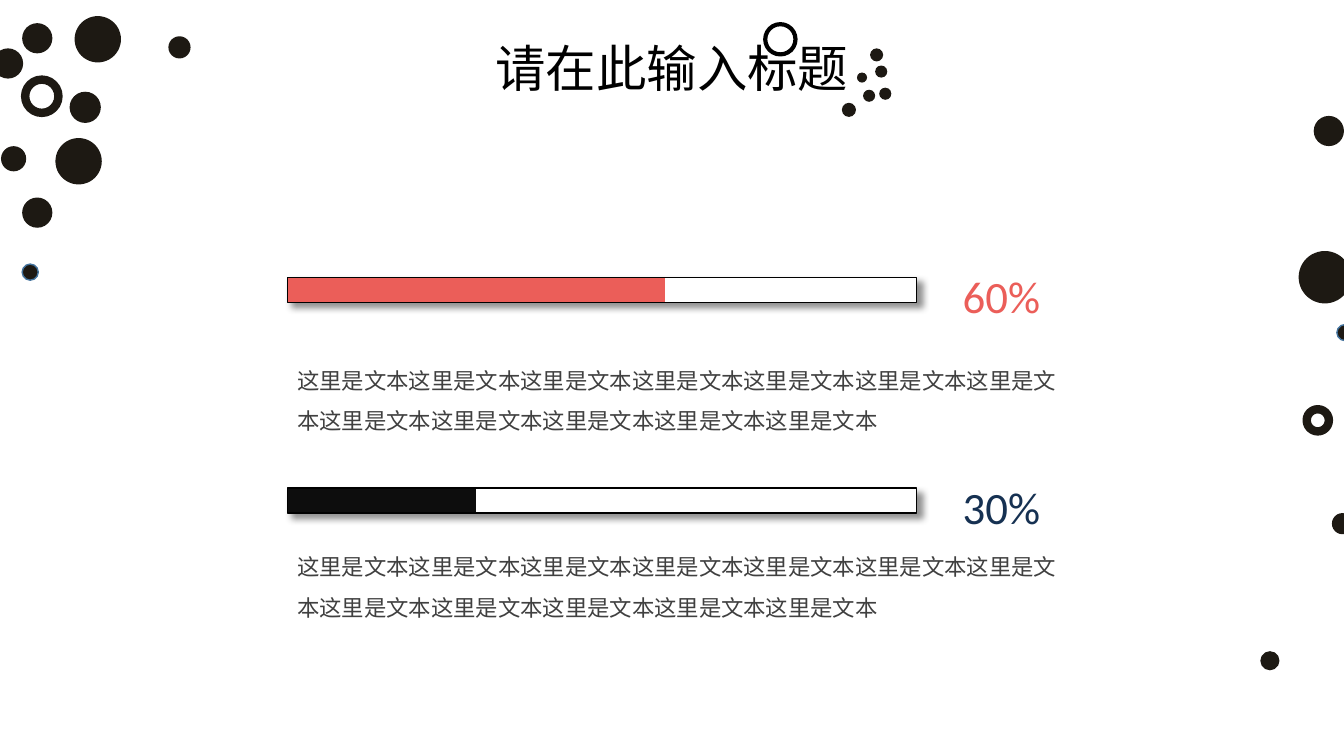
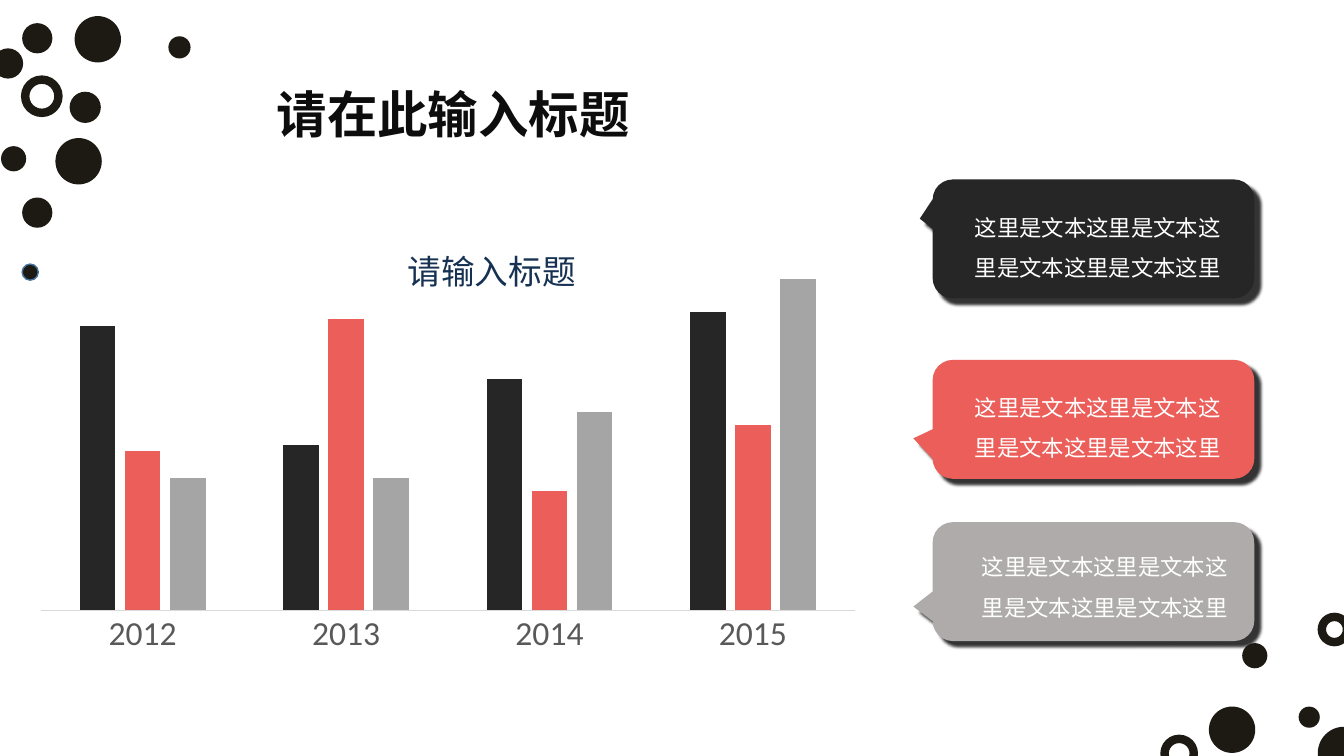
from dataclasses import dataclass
from typing import NamedTuple

from lxml import etree
from pptx import Presentation
from pptx.chart import data as cd
from pptx.dml.color import RGBColor
from pptx.enum import chart as ch, shapes as sh, text as tx
from pptx.oxml import ns
from pptx.util import Inches, Pt


@dataclass(frozen=True)
class Theme:
    dot: str = "1D1913"
    dot_edge: str = "43739E"
    black: str = "000000"
    white: str = "FFFFFF"
    ink: str = "0D0D0D"
    charcoal: str = "262626"
    coral: str = "EB5E59"
    navy: str = "163152"
    gray: str = "A5A5A5"
    warm_gray: str = "AFABAB"
    body: str = "404040"
    axis_text: str = "595959"
    axis_line: str = "D9D9D9"
    latin: str = "Calibri"
    cjk: str = "Noto Sans CJK SC"
    title_size: int = 36
    number_size: int = 32
    chart_size: int = 24
    body_size: int = 16


T = Theme()


class Box(NamedTuple):
    x: float
    y: float
    w: float
    h: float


class Dot(NamedTuple):
    x: float
    y: float
    d: float
    fill: str | None = T.dot
    line: str | None = None
    weight: float = 1


class Shadow(NamedTuple):
    alpha: int
    blur: float
    dist: float


class Progress(NamedTuple):
    y: float
    percent: int
    bar_color: str
    number_color: str
    text_y: float


class Callout(NamedTuple):
    y: float
    color: str
    tip_x: float
    tip_y: float
    text_x: float
    text_y: float


def ring(x: float, y: float, d: float) -> Dot:
    return Dot(x, y, d, None, T.dot, 6)


def edged(x: float, y: float) -> Dot:
    return Dot(x, y, 0.16, T.dot, T.dot_edge)


LEFT_DOTS = [
    Dot(1.67, 0.36, 0.22), Dot(0.01, 1.45, 0.25), Dot(0.69, 0.91, 0.31),
    Dot(-0.07, 0.48, 0.3), edged(0.22, 2.62), ring(0.25, 0.79, 0.33),
    Dot(0.74, 0.16, 0.46), Dot(0.22, 1.96, 0.3), Dot(0.22, 0.23, 0.3),
    Dot(0.55, 1.37, 0.46),
]
RIGHT_DOTS = [
    edged(13.26, 3.22), Dot(13.21, 5.09, 0.21), Dot(12.88, 2.49, 0.52),
    Dot(12.5, 6.46, 0.19), ring(12.96, 4.06, 0.22), Dot(13.03, 1.15, 0.3),
]
TITLE_DOTS = [
    Dot(8.35, 1.02, 0.14), Dot(8.5, 0.72, 0.1), Dot(8.63, 0.48, 0.13),
    Dot(8.68, 0.65, 0.12), Dot(8.56, 0.89, 0.12), Dot(8.72, 0.87, 0.12),
    Dot(7.59, 0.24, 0.3, T.white, T.black, 3),
]
CORNER_DOTS = [
    Dot(13.07, 7.21, 0.52), Dot(11.99, 7.01, 0.46), Dot(12.88, 7.01, 0.21),
    Dot(12.32, 6.38, 0.25), ring(11.55, 7.33, 0.29), ring(13.11, 6.12, 0.25),
]
PROGRESS = [
    Progress(2.75, 60, T.coral, T.coral, 3.46),
    Progress(4.84, 30, T.ink, T.navy, 5.31),
]
CALLOUTS = [
    Callout(1.78, T.charcoal, -0.54, -0.17, 9.57, 1.94),
    Callout(3.57, T.coral, -0.56, 0.16, 9.57, 3.73),
    Callout(5.18, T.warm_gray, -0.56, 0.21, 9.64, 5.31),
]
CATEGORIES = ["2012", "2013", "2014", "2015"]
SERIES = [
    ("Series 1", (86, 50, 70, 90), T.charcoal),
    ("Series 2", (48, 88, 36, 56), T.coral),
    ("Series 3", (40, 40, 60, 100), T.gray),
]
TITLE = "请在此输入标题"
PHRASE = "这里是文本"
BAR_SHADOW = Shadow(44, 5, 5)
CALLOUT_SHADOW = Shadow(80, 2, 6)


def rgb(color: str) -> RGBColor:
    return RGBColor.from_string(color)


def set_all(target, values: dict) -> None:
    for name, value in values.items():
        setattr(target, name, value)


def set_font(font, size: float, color: str, name: str, bold: bool = False) -> None:
    set_all(font, {"size": Pt(size), "name": name, "bold": bold})
    font.color.rgb = rgb(color)


def add_run(p, text: str, size: float, color: str, name: str, bold: bool = False) -> None:
    r = p.add_run()
    r.text = text
    set_font(r.font, size, color, name, bold)
    etree.SubElement(r._r.get_or_add_rPr(), ns.qn("a:ea"), typeface=name)


def add_text(s, box: Box, text: str, size: float, color: str, name: str = T.cjk,
             bold: bool = False, **paragraph) -> None:
    tf = s.shapes.add_textbox(*map(Inches, box)).text_frame
    set_all(tf, {"word_wrap": True, "auto_size": tx.MSO_AUTO_SIZE.SHAPE_TO_FIT_TEXT})
    p = tf.paragraphs[0]
    set_all(p, paragraph)
    add_run(p, text, size, color, name, bold)


def add_title(s, x: float, y: float, color: str, bold: bool = False) -> None:
    add_text(s, Box(x, y, 5.27, 0.71), TITLE, T.title_size, color, bold=bold,
             alignment=tx.PP_ALIGN.CENTER)


def add_body(s, box: Box, text: str, color: str) -> None:
    add_text(s, box, text, T.body_size, color, line_spacing=1.5)


def add_shape(shapes, kind, box: Box, fill: str | None, line: str | None = None,
              weight: float = 1):
    sp = shapes.add_shape(kind, *map(Inches, box))
    sp.shadow.inherit = False
    if fill:
        sp.fill.solid()
        sp.fill.fore_color.rgb = rgb(fill)
    else:
        sp.fill.background()
    if line:
        sp.line.color.rgb = rgb(line)
        sp.line.width = Pt(weight)
    else:
        sp.line.fill.background()
    return sp


def add_shadow(sp, shadow: Shadow) -> None:
    effects = sp._element.spPr.find(ns.qn("a:effectLst"))
    outer = etree.SubElement(
        effects, ns.qn("a:outerShdw"), blurRad=str(Pt(shadow.blur)),
        dist=str(Pt(shadow.dist)), dir="2700000", algn="tl", rotWithShape="0")
    color = etree.SubElement(outer, ns.qn("a:srgbClr"), val=T.black)
    etree.SubElement(color, ns.qn("a:alpha"), val=str(shadow.alpha * 1000))


def add_dots(s, dots: list[Dot]) -> None:
    group = s.shapes.add_group_shape()
    for dot in dots:
        add_shape(group.shapes, sh.MSO_SHAPE.OVAL, Box(dot.x, dot.y, dot.d, dot.d),
                  dot.fill, dot.line, dot.weight)


def add_progress(s, item: Progress) -> None:
    sp = add_shape(s.shapes, sh.MSO_SHAPE.RECTANGLE, Box(2.85, item.y, 6.24, 0.25),
                   T.white, T.black)
    sp.fill.gradient()
    sp.fill.gradient_angle = 0
    for stop, color in zip(sp.fill.gradient_stops, (item.bar_color, T.white)):
        stop.position = item.percent / 100
        stop.color.rgb = rgb(color)
    add_shadow(sp, BAR_SHADOW)
    add_text(s, Box(9.45, item.y - 0.13, 1.16, 0.64), f"{item.percent}%",
             T.number_size, item.number_color, T.latin)
    add_body(s, Box(2.85, item.text_y, 7.76, 1.18), PHRASE * 12, T.body)


def add_callout(s, item: Callout) -> None:
    sp = add_shape(s.shapes, sh.MSO_SHAPE.ROUNDED_RECTANGULAR_CALLOUT,
                   Box(9.25, item.y, 3.19, 1.18), item.color)
    for i, value in enumerate((item.tip_x, item.tip_y, 0.17)):
        sp.adjustments[i] = value
    add_shadow(sp, CALLOUT_SHADOW)
    add_body(s, Box(item.text_x, item.text_y, 2.81, 0.86), PHRASE * 4 + "这里", T.white)


def set_layout(element, **values) -> None:
    layout = element.find(ns.qn("c:layout"))
    if layout is None:
        layout = etree.Element(ns.qn("c:layout"))
        after = element.find(ns.qn("c:tx"))
        element.insert(0 if after is None else element.index(after) + 1, layout)
    manual = etree.SubElement(layout, ns.qn("c:manualLayout"))
    for name, value in values.items():
        etree.SubElement(manual, ns.qn(f"c:{name}"), val=str(value))


def add_column_chart(s) -> None:
    data = cd.CategoryChartData()
    data.categories = CATEGORIES
    for name, values, _ in SERIES:
        data.add_series(name, values)
    chart = s.shapes.add_chart(ch.XL_CHART_TYPE.COLUMN_CLUSTERED,
                               *map(Inches, Box(0.24, 1.56, 8.32, 5.55)), data).chart
    set_font(chart.font, 10, T.black, T.latin)
    chart.has_legend = False
    chart.has_title = True
    add_run(chart.chart_title.text_frame.paragraphs[0], "请输入标题",
            T.chart_size, T.navy, T.cjk)
    set_layout(chart.chart_title._element, xMode="edge", yMode="edge", x=0.45, y=0.14)
    set_layout(chart._chartSpace.chart.plotArea, layoutTarget="inner", xMode="edge",
               yMode="edge", x=0.02, y=0.1, w=0.97, h=0.71)
    plot = chart.plots[0]
    set_all(plot, {"gap_width": 219, "overlap": -27, "vary_by_categories": False})
    for series, (_, _, color) in zip(plot.series, SERIES):
        series.format.fill.solid()
        series.format.fill.fore_color.rgb = rgb(color)
    set_all(chart.value_axis, {"visible": False, "has_major_gridlines": False,
                               "minimum_scale": 0, "maximum_scale": 120})
    axis = chart.category_axis
    set_all(axis, {"major_tick_mark": ch.XL_TICK_MARK.NONE, "has_major_gridlines": False})
    set_font(axis.tick_labels.font, T.chart_size, T.axis_text, T.latin)
    axis.format.line.color.rgb = rgb(T.axis_line)
    axis.format.line.width = Pt(0.75)


def build_progress_slide(s) -> None:
    for item in PROGRESS:
        add_progress(s, item)
    add_dots(s, RIGHT_DOTS)
    add_dots(s, LEFT_DOTS)
    add_title(s, 4.03, 0.32, T.black)
    add_dots(s, TITLE_DOTS)


def build_chart_slide(s) -> None:
    add_column_chart(s)
    for item in CALLOUTS:
        add_callout(s, item)
    add_title(s, 1.86, 0.78, T.ink, bold=True)
    add_dots(s, LEFT_DOTS)
    add_dots(s, CORNER_DOTS)


def main() -> None:
    prs = Presentation()
    set_all(prs, {"slide_width": Inches(13.33), "slide_height": Inches(7.5)})
    for build in (build_progress_slide, build_chart_slide):
        build(prs.slides.add_slide(prs.slide_layouts[6]))
    prs.save("out.pptx")


if __name__ == "__main__":
    main()
